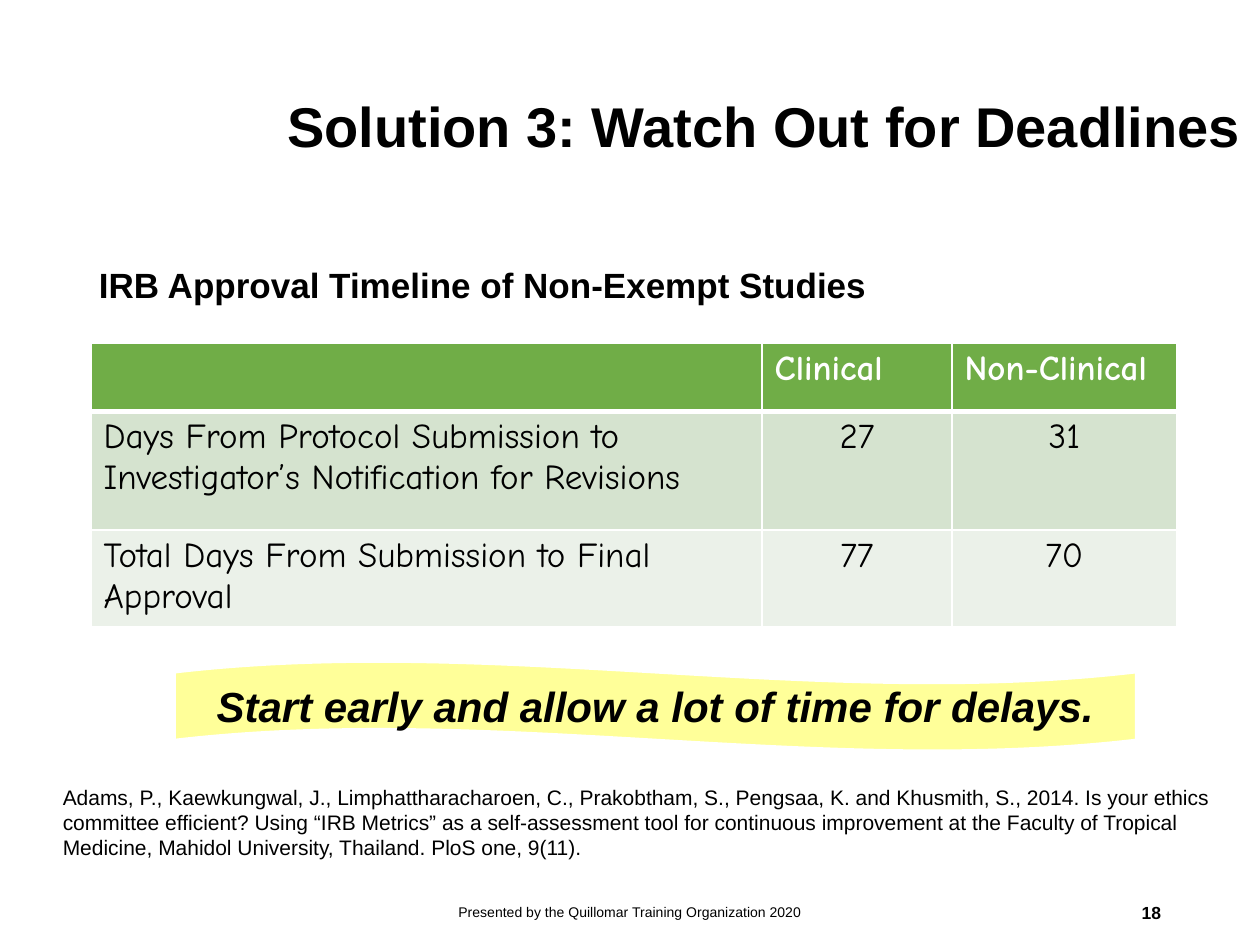
"""Build a slide on IRB approval timelines with a table and a highlighted takeaway."""
from pptx import Presentation
from pptx.dml.color import RGBColor
from pptx.enum.shapes import MSO_SHAPE
from pptx.enum.text import MSO_ANCHOR, PP_ALIGN
from pptx.oxml import parse_xml
from pptx.oxml.ns import nsdecls
from pptx.util import Pt


def color(hex_value):
    return RGBColor.from_string(hex_value)


def write(frame, text, size, align=PP_ALIGN.LEFT, bold=False, italic=False, font="Arial", ink="000000"):
    paragraph = frame.paragraphs[0]
    paragraph.alignment = align
    run = paragraph.add_run()
    run.text = text
    run.font.name = font
    run.font.size = Pt(size)
    run.font.bold = bold
    run.font.italic = italic
    run.font.color.rgb = color(ink)


deck = Presentation()
deck.slide_width, deck.slide_height = Pt(720), Pt(540)
slide = deck.slides.add_slide(deck.slide_layouts[6])

citation = (
    "Adams, P., Kaewkungwal, J., Limphattharacharoen, C., Prakobtham, S., Pengsaa, K. and Khusmith, S., 2014. "
    "Is your ethics committee efficient? Using “IRB Metrics” as a self-assessment tool for continuous improvement "
    "at the Faculty of Tropical Medicine, Mahidol University, Thailand. PloS one, 9(11)."
)
texts = [
    ("Solution 3: Watch Out for Deadlines", (157, 19.5, 563, 104.5), 32, PP_ALIGN.LEFT, True, MSO_ANCHOR.MIDDLE),
    ("Presented by the Quillomar Training Organization 2020", (238.5, 507, 243, 28.5), 8, PP_ALIGN.CENTER, False,
     MSO_ANCHOR.MIDDLE),
    ("18", (508.5, 507, 162, 28.5), 10, PP_ALIGN.RIGHT, True, MSO_ANCHOR.MIDDLE),
    ("IRB Approval Timeline of Non-Exempt Studies", (49.5, 147, 473, 31.5), 20, PP_ALIGN.LEFT, True, MSO_ANCHOR.TOP),
    (citation, (28.8, 444.5, 691.2, 51), 12, PP_ALIGN.LEFT, False, MSO_ANCHOR.TOP),
]
for text, place, size, align, bold, anchor in texts:
    frame = slide.shapes.add_textbox(*map(Pt, place)).text_frame
    frame.word_wrap = True
    frame.vertical_anchor = anchor
    write(frame, text, size, align, bold)

timeline_rows = [
    ("", "Clinical", "Non-Clinical"),
    ("Days From Protocol Submission to Investigator’s Notification for Revisions", "27", "31"),
    ("Total Days From Submission to Final Approval", "77", "70"),
]
row_fills = ["70AD47", "D5E3CF", "EBF1E9"]
timeline = slide.shapes.add_table(3, 3, Pt(52), Pt(196), Pt(620.5), Pt(146)).table
for column, width in zip(timeline.columns, (383.5, 108.5, 128.5)):
    column.width = Pt(width)
for row, height in zip(timeline.rows, (39, 68, 39)):
    row.height = Pt(height)

for r, labels in enumerate(timeline_rows):
    for c, label in enumerate(labels):
        cell = timeline.cell(r, c)
        header = r == 0
        if label:
            align = PP_ALIGN.CENTER if r and c else PP_ALIGN.LEFT
            write(cell.text_frame, label, 20, align, header, font="Comic Neue", ink="FFFFFF" if header else "000000")
        properties = cell._tc.get_or_add_tcPr()
        for side in ("lnL", "lnR", "lnT", "lnB"):
            thick = (r, side) in ((0, "lnB"), (1, "lnT"))
            properties.append(parse_xml(
                f'<a:{side} {nsdecls("a")} w="{Pt(3 if thick else 1)}"><a:solidFill>'
                f'<a:srgbClr val="FFFFFF"/></a:solidFill></a:{side}>'
            ))
        cell.fill.solid()
        cell.fill.fore_color.rgb = color(row_fills[r])

takeaway = slide.shapes.add_shape(MSO_SHAPE.WAVE, Pt(100), Pt(378), Pt(549), Pt(51))
takeaway.shadow.inherit = False
takeaway.fill.solid()
takeaway.fill.fore_color.rgb = color("FFFF99")
takeaway.line.color.rgb = color("FFFFFF")
takeaway.line.width = Pt(1)
takeaway.text_frame.word_wrap = True
takeaway.text_frame.vertical_anchor = MSO_ANCHOR.MIDDLE
write(takeaway.text_frame, "Start early and allow a lot of time for delays.", 24, PP_ALIGN.CENTER, True, True)

deck.save("out.pptx")
